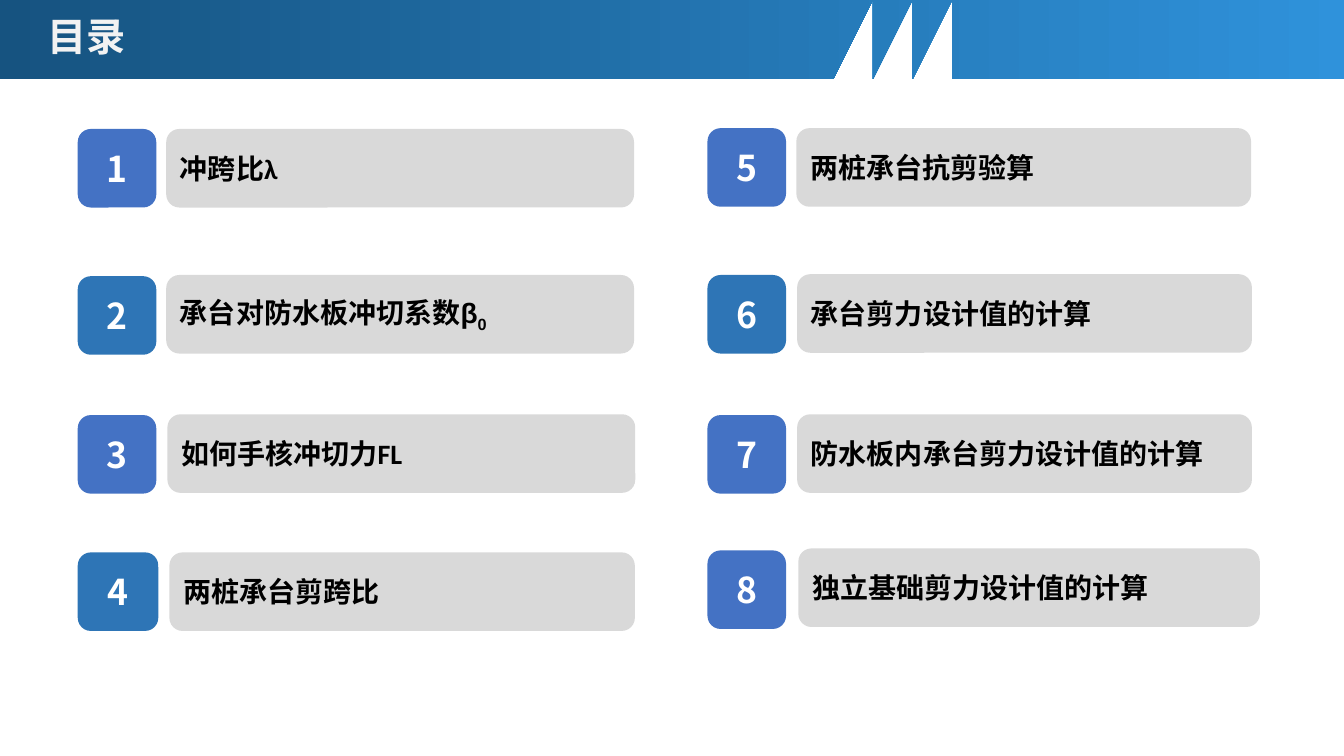
from pptx import Presentation
from pptx import util as u
from pptx.dml.color import RGBColor
from pptx.enum import shapes, text
from pptx.enum.lang import MSO_LANGUAGE_ID

TITLE = "目录"
BETA = ("β", "0")
LEFT = [
    ("冲跨比λ", "blue", 3.25, 1.98, 4.19, 3.25, 11.79),
    ("承台对防水板冲切系数", "teal", 6.96, 1.98, 4.19, 6.93, 11.79),
    ("如何手核冲切力FL", "blue", 10.46, 1.98, 4.22, 10.44, 11.79),
    ("两桩承台剪跨比", "teal", 13.92, 2.03, 4.27, 13.92, 11.73),
]
RIGHT = [
    ("两桩承台抗剪验算", "blue", 3.23, 1.98, 20.07, 3.23, 11.46),
    ("承台剪力设计值的计算", "teal", 6.93, 1.98, 20.09, 6.91, 11.46),
    ("防水板内承台剪力设计值的计算", "blue", 10.46, 1.98, 20.09, 10.44, 11.46),
    ("独立基础剪力设计值的计算", "blue", 13.87, 1.98, 20.12, 13.82, 11.63),
]
COLS = [(1.96, LEFT), (17.83, RIGHT)]
HEX = {"blue": "4472C4", "teal": "2E75B6", "gray": "D9D9D9", "white": "FFFFFF",
       "black": "000000", "pale": "F2F2F2", "light": "2F92DB", "dark": "165380"}
WIDE, HIGH = 33.87, 19.05
BAR, SLANT, TALL = 1.6, 0.6, 1.98
CUT, PITCH, BAND = 22.28, 0.94, 0.4


def color(key):
    return RGBColor.from_string(HEX[key])


def style(font, name, size, key):
    font.name, font.size, font.bold = name, u.Pt(size), True
    font.color.rgb = color(key)
    font.language_id = MSO_LANGUAGE_ID.SIMPLIFIED_CHINESE


def add_box(slide, x, y, w, key, words, name, size, ink, align):
    box = slide.shapes.add_shape(shapes.MSO_SHAPE.ROUNDED_RECTANGLE,
                                 u.Cm(x), u.Cm(y), u.Cm(w), u.Cm(TALL))
    box.shadow.inherit = False
    box.fill.solid()
    box.fill.fore_color.rgb = color(key)
    box.line.fill.background()
    frame = box.text_frame
    frame.vertical_anchor = text.MSO_ANCHOR.MIDDLE
    para = frame.paragraphs[0]
    para.alignment = align
    para.add_run().text = words
    style(para.font, name, size, ink)
    return para


def add_bar(slide):
    bands = [(0, CUT - PITCH + BAND), (CUT, CUT + BAND),
             (CUT + PITCH, CUT + PITCH + BAND), (CUT + 2 * PITCH, WIDE)]
    pen = slide.shapes.build_freeform(0, 0, scale=u.Cm(1))
    for start, end in bands:
        low = max(start - SLANT, 0)
        base = end if end == WIDE else end - SLANT
        pen.move_to(start, 0)
        pen.add_line_segments([(end, 0), (base, BAR), (low, BAR)], close=True)
    bar = pen.convert_to_shape()
    bar.shadow.inherit = False
    bar.line.fill.background()
    bar.fill.gradient()
    bar.fill.gradient_angle = 180
    for stop, key in zip(bar.fill.gradient_stops, ("light", "dark")):
        stop.color.rgb = color(key)
    slide.shapes.element.insert(2, bar.element)


def add_title(slide):
    title = slide.shapes.title
    title.left, title.top = u.Cm(0.94), u.Cm(0.18)
    title.width, title.height = u.Cm(13.21), u.Cm(1.45)
    title.text_frame.text = TITLE
    title.text_frame.vertical_anchor = text.MSO_ANCHOR.MIDDLE
    para = title.text_frame.paragraphs[0]
    para.alignment = text.PP_ALIGN.LEFT
    style(para.font, "Calibri", 28, "pale")


def main():
    prs = Presentation()
    prs.slide_width, prs.slide_height = u.Cm(WIDE), u.Cm(HIGH)
    slide = prs.slides.add_slide(prs.slide_layouts[5])
    add_bar(slide)
    add_title(slide)
    count = 0
    for left, rows in COLS:
        for words, key, top, wide, x, y, w in rows:
            count += 1
            add_box(slide, left, top, wide, key, str(count),
                    "Noto Sans CJK SC", 25.4, "white", text.PP_ALIGN.CENTER)
            label = add_box(slide, x, y, w, "gray", words,
                            "Calibri", 20, "black", text.PP_ALIGN.LEFT)
            if count == 2:
                for part in BETA:
                    run = label.add_run()
                    run.text = part
                    run.font.name = "Arial"
                run.font._element.set("baseline", "-25000")
    prs.save("out.pptx")


if __name__ == "__main__":
    main()
